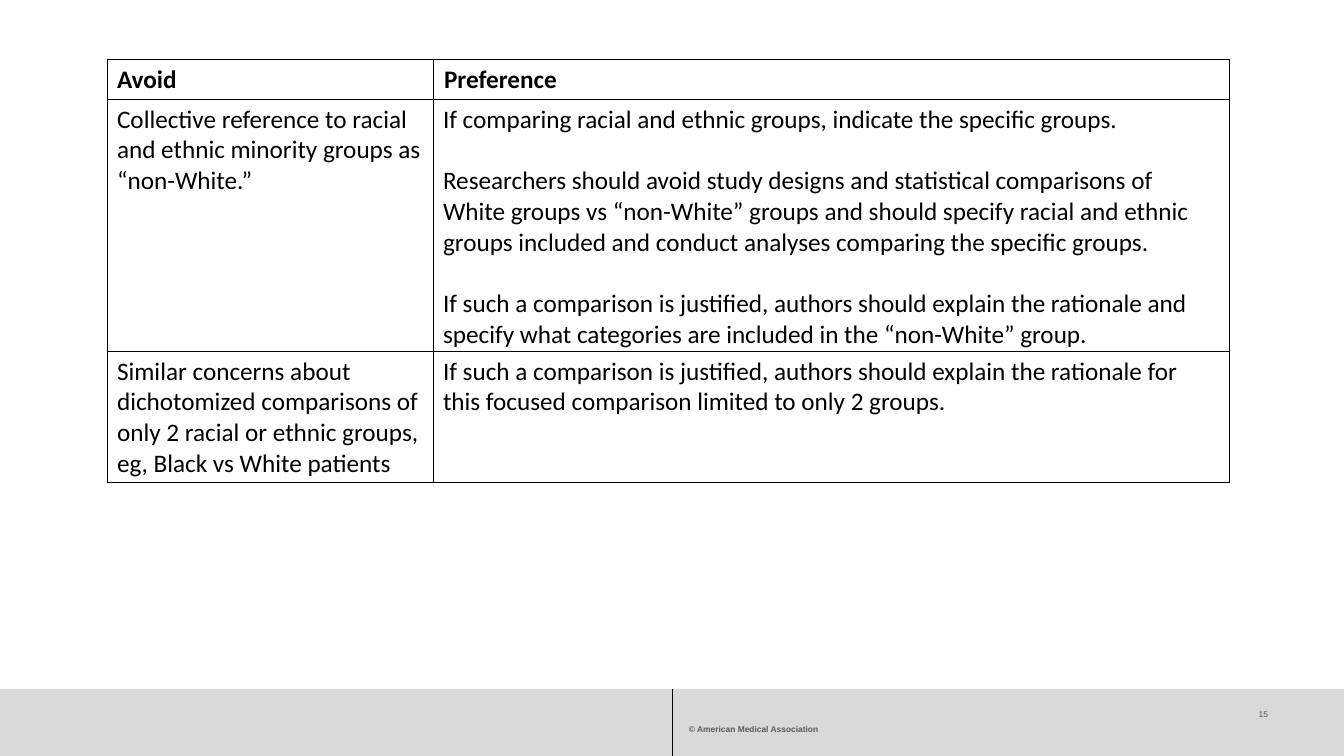
from lxml.etree import SubElement
from pptx import Presentation
from pptx.dml.color import RGBColor
from pptx.enum.shapes import MSO_CONNECTOR, MSO_SHAPE
from pptx.enum.text import PP_ALIGN
from pptx.oxml.ns import qn
from pptx.util import Pt

PX = 914400 / 100.8
THEME = {
    "ink": RGBColor.from_string("000000"),
    "muted": RGBColor.from_string("595959"),
    "band": RGBColor.from_string("D9D9D9"),
    "table_font": "Calibri", "table_size": Pt(18), "table_gap": Pt(22),
    "footer_font": "Arial", "footer_size": Pt(6),
    "border": Pt(0.75), "divider": Pt(0.25),
}


def px(*lengths):
    return [round(length * PX) for length in lengths]


def write(frame, texts, format_values, gap=0):
    """Put one paragraph per text into a frame."""
    for index, text in enumerate(texts):
        para = frame.paragraphs[0] if index == 0 else frame.add_paragraph()
        span = para.add_run()
        span.text = text
        if index:
            para.space_before = gap
        for name, value in format_values["font"].items():
            setattr(span.font, name, value)
        span.font.color.rgb = format_values["color"]
        para.alignment = format_values.get("align", PP_ALIGN.LEFT)


deck = Presentation()
deck.slide_width, deck.slide_height = px(1344, 756)
page = deck.slides.add_slide(deck.slide_layouts[6])

# Footer band and divider
band = page.shapes.add_shape(MSO_SHAPE.RECTANGLE, *px(0, 689, 1344, 67))
band.shadow.inherit = False
band.fill.solid()
band.fill.fore_color.rgb = THEME["band"]
band.line.fill.background()

divider = page.shapes.add_connector(MSO_CONNECTOR.STRAIGHT, *px(672, 689, 672, 756))
divider.line.color.rgb = THEME["ink"]
divider.line.width = THEME["divider"]
SubElement(divider.element.spPr, qn("a:effectLst"))

# Footer texts
footers = [
    ("© American Medical Association", (689, 724, 454, 10), True, PP_ALIGN.LEFT),
    ("15", (1192, 709, 76, 40), False, PP_ALIGN.RIGHT),
]
for text, place, bold, align in footers:
    frame = page.shapes.add_textbox(*px(*place)).text_frame
    for name, value in {"word_wrap": True, "margin_left": 0, "margin_right": 0,
                        "margin_top": 0, "margin_bottom": 0}.items():
        setattr(frame, name, value)
    font = {"name": THEME["footer_font"], "size": THEME["footer_size"], "bold": bold}
    write(frame, [text], {"font": font, "color": THEME["muted"], "align": align})

# Guidance table body, then its header table
body = [
    [
        ["Collective reference to racial and ethnic minority groups as “non-White.”"],
        [
            "If comparing racial and ethnic groups, indicate the specific groups.",
            "Researchers should avoid study designs and statistical comparisons of "
            "White groups vs “non-White” groups and should specify racial and ethnic "
            "groups included and conduct analyses comparing the specific groups.",
            "If such a comparison is justified, authors should explain the rationale "
            "and specify what categories are included in the “non-White” group.",
        ],
    ],
    [
        ["Similar concerns about dichotomized comparisons of only 2 racial or "
         "ethnic groups, eg, Black vs White patients"],
        ["If such a comparison is justified, authors should explain the rationale "
         "for this focused comparison limited to only 2 groups."],
    ],
]
header = [[["Avoid"], ["Preference"]]]
tables = [
    (body, 99, (326, 797), (252, 131), False),
    (header, 59, (327, 796), (40,), True),
]
for rows, top, widths, heights, bold in tables:
    place = px(107, top, sum(widths), sum(heights))
    table = page.shapes.add_table(len(rows), len(widths), *place).table
    table.first_row = table.horz_banding = False
    for column, width in zip(table.columns, px(*widths)):
        column.width = width
    font = {"name": THEME["table_font"], "size": THEME["table_size"], "bold": bold}
    for row, height, contents in zip(table.rows, px(*heights), rows):
        row.height = height
        for cell, texts in zip(row.cells, contents):
            cell.margin_bottom = 0
            write(cell.text_frame, texts, {"font": font, "color": THEME["ink"]},
                  THEME["table_gap"])
            # Borders come before the fill in the cell properties
            properties = cell._tc.get_or_add_tcPr()
            for side in ("lnL", "lnR", "lnT", "lnB"):
                border = SubElement(properties, qn(f"a:{side}"), w=str(THEME["border"]))
                paint = SubElement(border, qn("a:solidFill"))
                SubElement(paint, qn("a:srgbClr"), val=str(THEME["ink"]))
            cell.fill.background()

deck.save("out.pptx")
